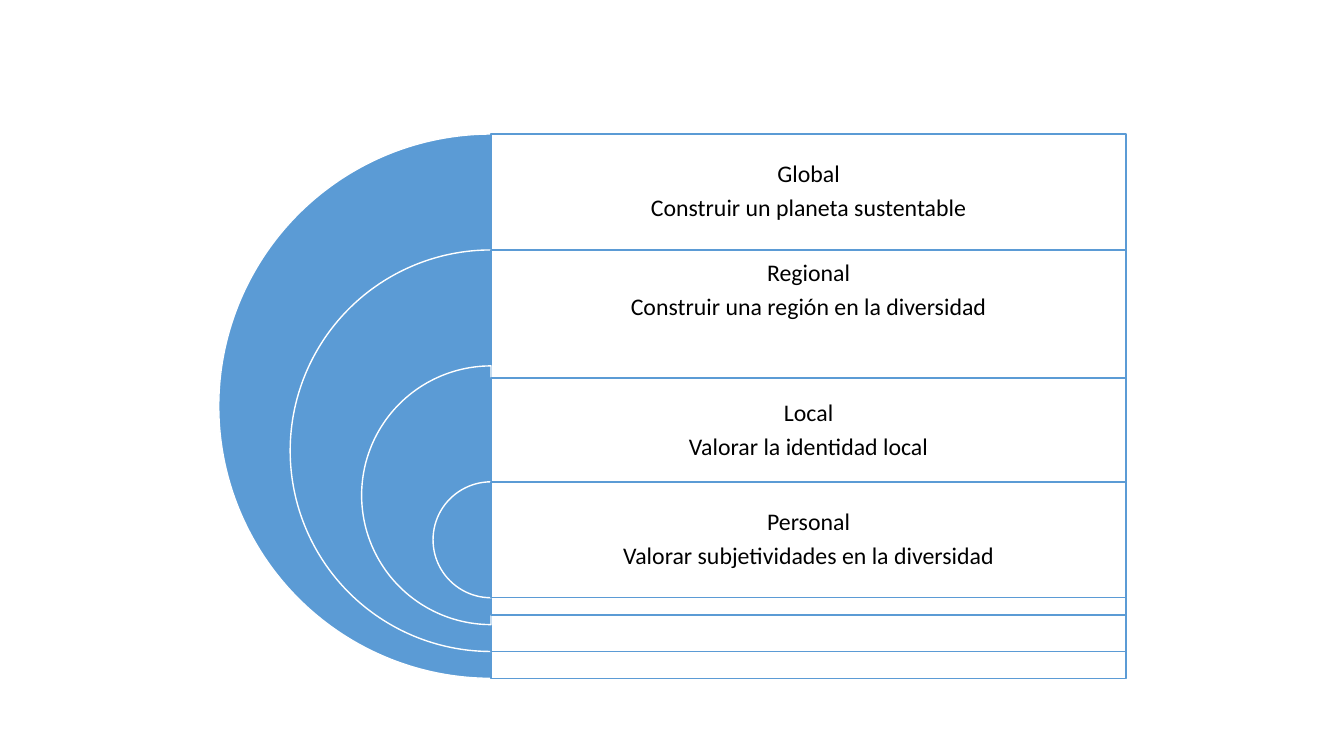
from dataclasses import dataclass

from lxml import etree
from pptx import Presentation
from pptx import util as u
from pptx.dml.color import RGBColor
from pptx.enum import shapes, text
from pptx.oxml.ns import qn


@dataclass(frozen=True)
class Theme:
    blue: str = "5B9BD5"
    white: str = "FFFFFF"
    ink: str = "000000"
    font: str = "Calibri"
    size: float = 17
    line: float = 1
    veil: int = 90  # panel opacity in percent


def write(box, lines, theme, pad=0.07, low=0.07):
    """Fill a box with centred lines; low is the bottom inset."""
    frame = box.text_frame
    frame.word_wrap = True
    frame.vertical_anchor = text.MSO_ANCHOR.MIDDLE
    frame.margin_left = frame.margin_right = frame.margin_top = u.Inches(pad)
    frame.margin_bottom = u.Inches(low)
    for i, line in enumerate(lines):
        para = frame.paragraphs[0] if i == 0 else frame.add_paragraph()
        para.alignment = text.PP_ALIGN.CENTER
        para.line_spacing = 0.9
        para.space_after = u.Pt(6)
        run = para.add_run()
        run.text = line
        run.font.name = theme.font
        run.font.size = u.Pt(theme.size)
        run.font.color.rgb = RGBColor.from_string(theme.ink)


class Deck:
    def __init__(self, theme):
        self.theme = theme
        self.show = Presentation()
        self.show.slide_width = u.Inches(13.33)
        self.show.slide_height = u.Inches(7.5)
        slide = self.show.slides.add_slide(self.show.slide_layouts[6])
        self.group = slide.shapes.add_group_shape()

    def shape(self, kind, area, fill, line):
        item = self.group.shapes.add_shape(kind, *map(u.Inches, area))
        item.shadow.inherit = False
        item.fill.solid()
        item.fill.fore_color.rgb = RGBColor.from_string(fill)
        item.line.color.rgb = RGBColor.from_string(line)
        item.line.width = u.Pt(self.theme.line)
        return item

    def half(self, mid, top, size):
        area = (mid - size / 2, top, size, size)
        pie = self.shape(shapes.MSO_SHAPE.PIE, area, self.theme.blue, self.theme.white)
        # Sweep from 90 to 270 degrees
        pie.adjustments[0] = 54
        pie.adjustments[1] = 162

    def panel(self, *area):
        rect = self.shape(shapes.MSO_SHAPE.RECTANGLE, area, self.theme.white, self.theme.blue)
        tint = rect.fill._xPr.find(qn("a:solidFill"))[0]
        etree.SubElement(tint, qn("a:alpha")).set("val", str(self.theme.veil * 1000))

    def label(self, area, lines, **form):
        box = self.group.shapes.add_textbox(*map(u.Inches, area))
        write(box, lines, self.theme, **form)


# Title, aim, panel top and height where they leave the ring, label height, format
LEVELS = [
    ("Global", "Construir un planeta sustentable", None, 1.15, {}),
    ("Regional", "Construir una región en la diversidad", None, 1.15, {"low": 0.41}),
    ("Local", "Valorar la identidad local", (3.75, 2.35), 1.05, {}),
    ("Personal", "Valorar subjetividades en la diversidad", None, 1.15, {}),
]
MID, TOP, WIDE = 4.87, 1.33, 6.3
OUTER, INNER, STEP = 5.4, 1.15, 1.15


def main():
    deck = Deck(Theme())
    shrink = (OUTER - INNER) / (len(LEVELS) - 1)
    for i, (name, aim, span, high, form) in enumerate(LEVELS):
        top, size = TOP + i * STEP, OUTER - i * shrink
        # Half ring, then its panel and label
        deck.half(MID, top, size)
        head, tall = span or (top, size)
        deck.panel(MID, head, WIDE, tall)
        deck.label((MID, head, WIDE, high), (name, aim), **form)
    deck.show.save("out.pptx")


if __name__ == "__main__":
    main()
